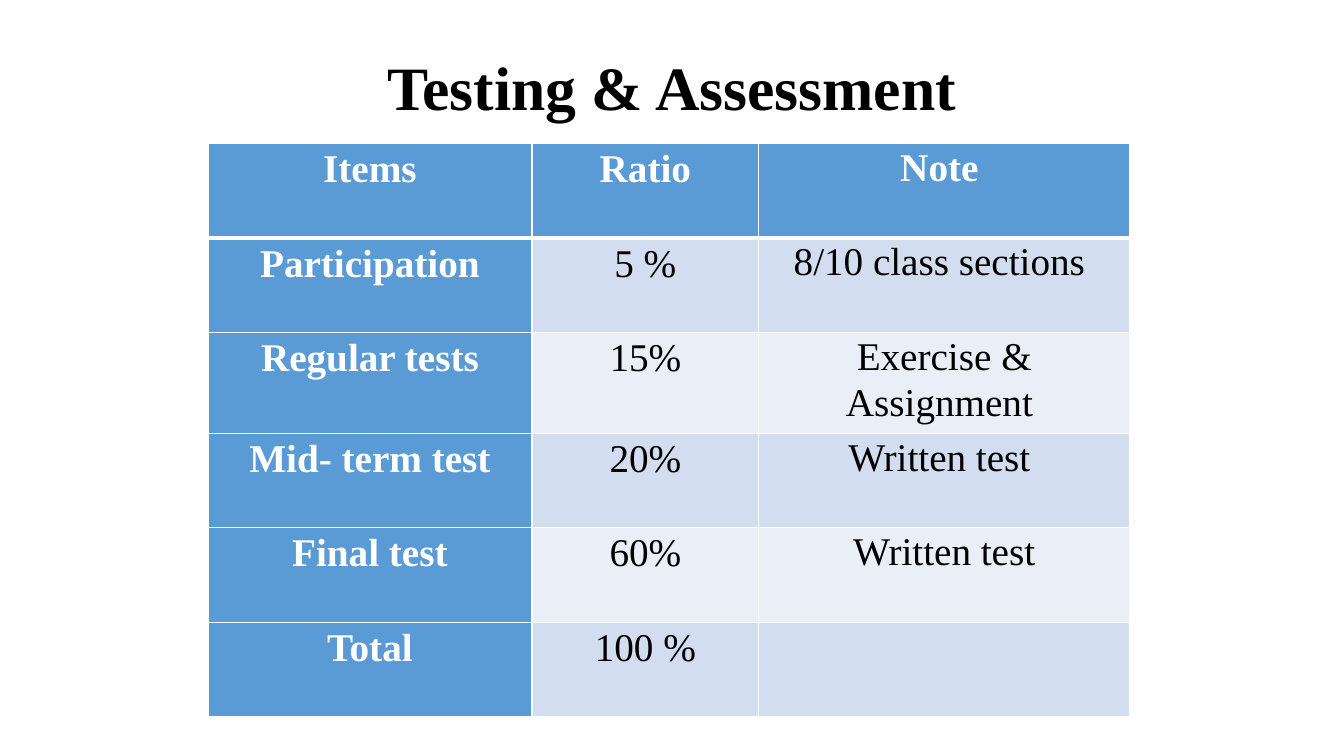
from dataclasses import dataclass

from lxml.etree import SubElement
from pptx import Presentation
from pptx.dml.color import RGBColor
from pptx.enum.text import MSO_ANCHOR, PP_ALIGN
from pptx.oxml.ns import qn
from pptx.util import Pt


@dataclass(frozen=True)
class Theme:
    font: str = "Times New Roman"
    title_size: float = 44
    table_size: float = 28
    text: str = "000000"
    white: str = "FFFFFF"
    accent: str = "5B9BD5"
    bands: tuple = ("D2DEEF", "EAEFF7")


THEME = Theme()

COLUMN_WIDTHS = (231.5, 162, 265)
ROW_HEIGHT = 67.5
THIN_BORDER, HEADER_BORDER = 1, 3
ASSESSMENT_ROWS = (
    ("Items", "Ratio", "Note "),
    ("Participation", "5 %", "8/10 class sections "),
    ("Regular tests", "15%", "Exercise &\nAssignment "),
    ("Mid- term test", "20%", "Written test "),
    ("Final test", "60%", "Written test"),
    ("Total", "100 %", ""),
)


def write_text(text_frame, text, *, size, color, bold=False, line_spacing=1.0, space=0):
    """Write one centred paragraph for each line of text."""
    for index, line in enumerate(text.split("\n")):
        paragraph = text_frame.paragraphs[0] if index == 0 else text_frame.add_paragraph()
        paragraph.alignment = PP_ALIGN.CENTER
        paragraph.line_spacing = line_spacing
        paragraph.space_before = paragraph.space_after = Pt(space)
        run = paragraph.add_run()
        run.text = line
        run.font.name = THEME.font
        run.font.size = Pt(size)
        run.font.bold = bold
        run.font.color.rgb = RGBColor.from_string(color)


def add_title(slide, text):
    text_box = slide.shapes.add_textbox(Pt(66), Pt(21.5), Pt(828), Pt(87))
    text_frame = text_box.text_frame
    text_frame.word_wrap = True
    text_frame.vertical_anchor = MSO_ANCHOR.MIDDLE
    write_text(text_frame, text, size=THEME.title_size, color=THEME.text,
               bold=True, line_spacing=0.9)


def set_borders(cell, top, bottom):
    """Draw white cell borders; this must come before the cell's fill."""
    properties = cell._tc.get_or_add_tcPr()
    widths = {"lnL": THIN_BORDER, "lnR": THIN_BORDER, "lnT": top, "lnB": bottom}
    for side, width in widths.items():
        line = SubElement(properties, qn(f"a:{side}"), w=str(Pt(width)))
        fill = SubElement(line, qn("a:solidFill"))
        SubElement(fill, qn("a:srgbClr"), val=THEME.white)


def format_cell(cell, text, row, column):
    is_heading = row == 0 or column == 0
    is_note = column == 2
    cell.margin_left = cell.margin_right = Pt(0 if is_note else 5)
    cell.margin_top = Pt(0 if is_note else 0.75)
    cell.margin_bottom = Pt(0)
    set_borders(cell,
                top=HEADER_BORDER if row == 1 else THIN_BORDER,
                bottom=HEADER_BORDER if row == 0 else THIN_BORDER)
    cell.fill.solid()
    background = THEME.accent if is_heading else THEME.bands[(row - 1) % 2]
    cell.fill.fore_color.rgb = RGBColor.from_string(background)
    if text:
        write_text(cell.text_frame, text, size=THEME.table_size,
                   color=THEME.white if is_heading else THEME.text,
                   bold=is_heading, line_spacing=1.07,
                   space=0 if "\n" in text else 6)


def add_assessment_table(slide):
    row_count = len(ASSESSMENT_ROWS)
    frame = slide.shapes.add_table(
        row_count, len(COLUMN_WIDTHS), Pt(148.5), Pt(102.5),
        Pt(sum(COLUMN_WIDTHS)), Pt(ROW_HEIGHT * row_count))
    table = frame.table
    table.first_col = True
    for column, width in zip(table.columns, COLUMN_WIDTHS):
        column.width = Pt(width)
    for row, texts in enumerate(ASSESSMENT_ROWS):
        table.rows[row].height = Pt(ROW_HEIGHT)
        for column, text in enumerate(texts):
            format_cell(table.cell(row, column), text, row, column)


def main():
    presentation = Presentation()
    presentation.slide_width = Pt(960)
    presentation.slide_height = Pt(540)
    slide = presentation.slides.add_slide(presentation.slide_layouts[6])
    add_title(slide, "Testing & Assessment")
    add_assessment_table(slide)
    presentation.save("out.pptx")


if __name__ == "__main__":
    main()
